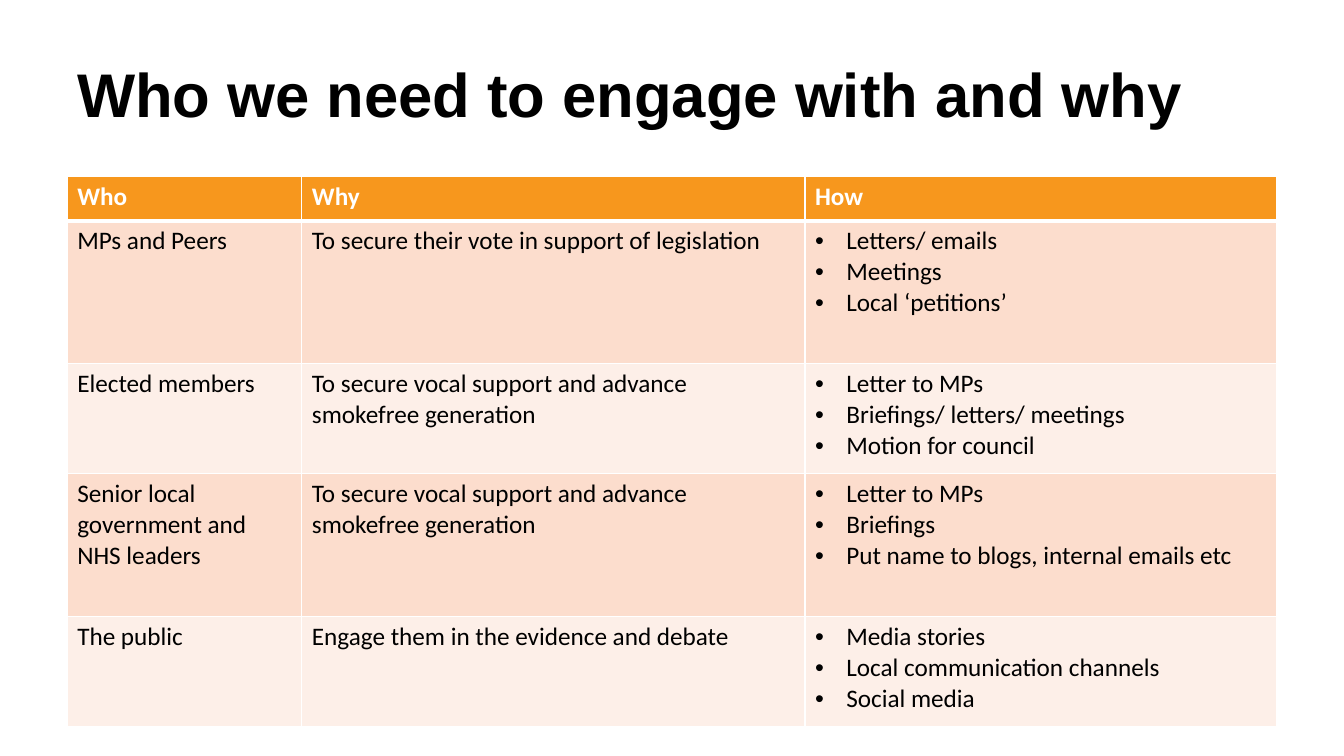
import pptx
import pptx.util
import pptx.dml.color
import pptx.enum.text
import pptx.oxml.ns
from lxml import etree

RGBColor = pptx.dml.color.RGBColor
Inches, Pt = pptx.util.Inches, pptx.util.Pt

BLACK = RGBColor(0x00, 0x00, 0x00)
WHITE = RGBColor(0xFF, 0xFF, 0xFF)
ORANGE = RGBColor(0xF7, 0x97, 0x1D)
PEACH = RGBColor(0xFC, 0xDD, 0xCD)
PALE_PEACH = RGBColor(0xFD, 0xEF, 0xE8)

TITLE = "Who we need to engage with and why"
HEADINGS = ("Who", "Why", "How")
AUDIENCES = [
    ("MPs and Peers", "To secure their vote in support of legislation",
     ["Letters/ emails", "Meetings", "Local ‘petitions’"]),
    ("Elected members", "To secure vocal support and advance smokefree generation",
     ["Letter to MPs", "Briefings/ letters/ meetings", "Motion for council"]),
    ("Senior local government and NHS leaders",
     "To secure vocal support and advance smokefree generation",
     ["Letter to MPs", "Briefings", "Put name to blogs, internal emails etc"]),
    ("The public", "Engage them in the evidence and debate",
     ["Media stories", "Local communication channels", "Social media"]),
]

SLIDE_WIDTH, SLIDE_HEIGHT = 13.33, 7.5
MARGIN = SLIDE_WIDTH / 20
CONTENT_WIDTH = SLIDE_WIDTH - 2 * MARGIN
TITLE_TOP, TITLE_HEIGHT = 0.3, 1.25
TABLE_TOP = 1.75
COLUMN_SHARES = (0.194, 0.416, 0.39)
HEADING_HEIGHT, TALL_ROW, SHORT_ROW = 0.44, 1.42, 1.09
BULLET_INDENT = Inches(0.31)
THIN, THICK = Pt(1), Pt(3)


def add_child(parent, tag, **attributes):
    child = etree.SubElement(parent, pptx.oxml.ns.qn(tag))
    for name, value in attributes.items():
        child.set(name, str(value))
    return child


def write(frame, lines, size=18, font="Calibri", color=BLACK, bold=False, bullets=False):
    """Fill a text frame with one paragraph per line."""
    for index, line in enumerate(lines):
        paragraph = frame.paragraphs[0] if index == 0 else frame.add_paragraph()
        if bullets:
            properties = paragraph._p.get_or_add_pPr()
            properties.set("marL", str(BULLET_INDENT))
            properties.set("indent", str(-BULLET_INDENT))
            add_child(properties, "a:buFont", typeface="Arial")
            add_child(properties, "a:buChar", char="•")
        run = paragraph.add_run()
        run.text = line
        run.font.size = Pt(size)
        run.font.name = font
        run.font.bold = bold
        run.font.color.rgb = color


def style_cell(cell, fill, top=THIN, bottom=THIN):
    """Give a cell white borders and a fill; borders must precede the fill."""
    properties = cell._tc.get_or_add_tcPr()
    for side, width in (("L", THIN), ("R", THIN), ("T", top), ("B", bottom)):
        border = add_child(properties, f"a:ln{side}", w=width)
        add_child(add_child(border, "a:solidFill"), "a:srgbClr", val=WHITE)
    cell.fill.solid()
    cell.fill.fore_color.rgb = fill


def add_title(slide):
    box = slide.shapes.add_textbox(Inches(MARGIN), Inches(TITLE_TOP),
                                   Inches(CONTENT_WIDTH), Inches(TITLE_HEIGHT))
    box.text_frame.word_wrap = True
    box.text_frame.vertical_anchor = pptx.enum.text.MSO_ANCHOR.MIDDLE
    write(box.text_frame, [TITLE], size=44, font="Arial", bold=True)


def add_audience_table(slide):
    heights = [HEADING_HEIGHT] + [SHORT_ROW if i % 2 else TALL_ROW
                                  for i in range(len(AUDIENCES))]
    table = slide.shapes.add_table(
        len(heights), len(HEADINGS), Inches(MARGIN), Inches(TABLE_TOP),
        Inches(CONTENT_WIDTH), Inches(sum(heights))).table
    for column, share in zip(table.columns, COLUMN_SHARES):
        column.width = Inches(CONTENT_WIDTH * share)
    for row, height in zip(table.rows, heights):
        row.height = Inches(height)

    for column, heading in enumerate(HEADINGS):
        cell = table.cell(0, column)
        style_cell(cell, ORANGE, bottom=THICK)
        write(cell.text_frame, [heading], color=WHITE, bold=True)

    for row, audience in enumerate(AUDIENCES, start=1):
        for column, content in enumerate(audience):
            cell = table.cell(row, column)
            style_cell(cell, PEACH if row % 2 else PALE_PEACH,
                       top=THICK if row == 1 else THIN)
            is_list = isinstance(content, list)
            write(cell.text_frame, content if is_list else [content], bullets=is_list)


def main():
    deck = pptx.Presentation()
    deck.slide_width = Inches(SLIDE_WIDTH)
    deck.slide_height = Inches(SLIDE_HEIGHT)
    slide = deck.slides.add_slide(deck.slide_layouts[6])
    add_title(slide)
    add_audience_table(slide)
    deck.save("out.pptx")


if __name__ == "__main__":
    main()
